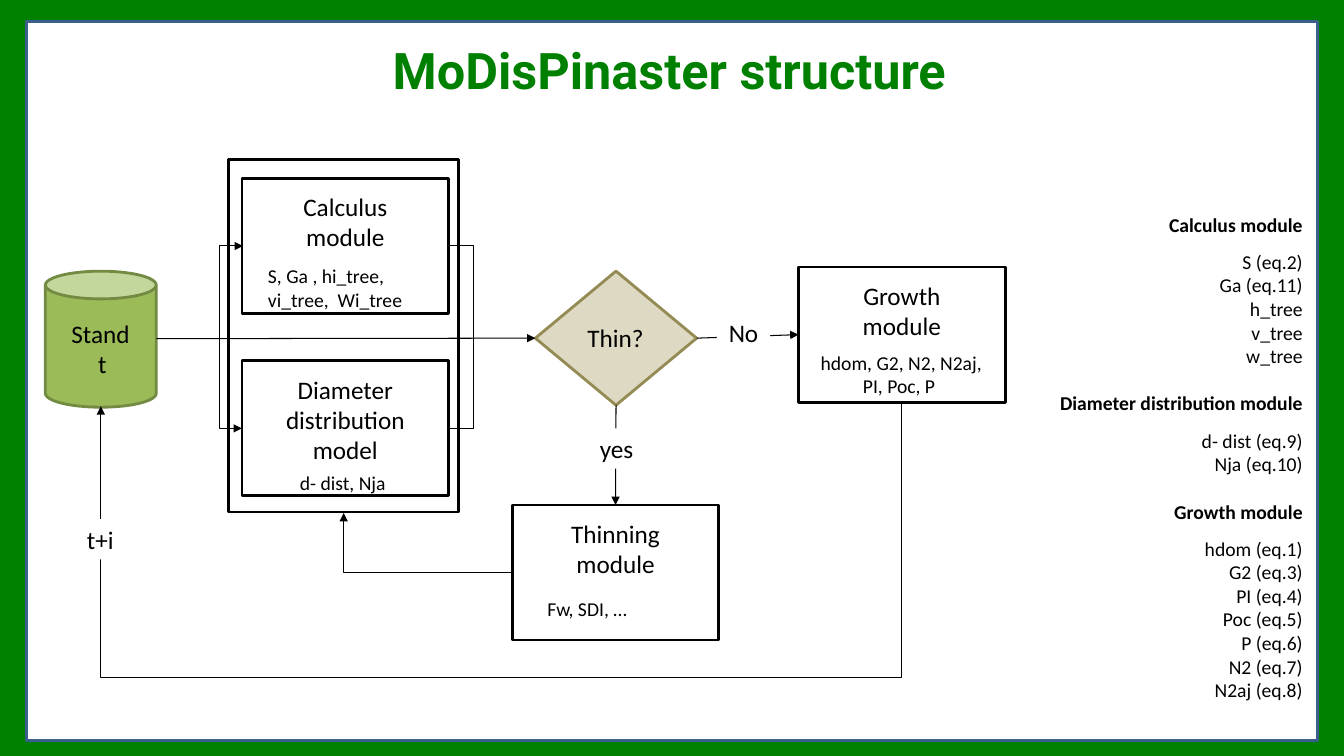
import pptx
import pptx.dml.color
import pptx.enum.shapes
import pptx.enum.text
import pptx.oxml.ns
import pptx.oxml.xmlchemy
import pptx.util

Inches, Pt = pptx.util.Inches, pptx.util.Pt
RGBColor = pptx.dml.color.RGBColor
Preset = pptx.enum.shapes.MSO_SHAPE
Link = pptx.enum.shapes.MSO_CONNECTOR
Align = pptx.enum.text.PP_ALIGN
Anchor = pptx.enum.text.MSO_ANCHOR
qn = pptx.oxml.ns.qn
new_element = pptx.oxml.xmlchemy.OxmlElement

BLACK = RGBColor(0x00, 0x00, 0x00)
WHITE = RGBColor(0xFF, 0xFF, 0xFF)
GREEN = RGBColor(0x00, 0x80, 0x00)
FRAME_BLUE = RGBColor(0x3A, 0x5F, 0x8C)
SAND = RGBColor(0xDD, 0xD9, 0xC3)
SAND_EDGE = RGBColor(0x94, 0x8A, 0x54)
LEAF = RGBColor(0x9B, 0xBB, 0x59)
LEAF_EDGE = RGBColor(0x73, 0x8A, 0x42)

MODULE_WIDTH, MODULE_HEIGHT = 2.05, 1.34


class FlowSlide:
    """Draws on one slide; all lengths are given in inches."""

    font = "Calibri"
    large, small = 18, 14

    def __init__(self, slide):
        self.shapes = slide.shapes

    def shape(self, preset, left, top, width, height, fill=None, edge=BLACK):
        shape = self.shapes.add_shape(
            preset, Inches(left), Inches(top), Inches(width), Inches(height))
        shape.shadow.inherit = False
        if fill is None:
            shape.fill.background()
        else:
            shape.fill.solid()
            shape.fill.fore_color.rgb = fill
        if edge is None:
            shape.line.fill.background()
        else:
            shape.line.color.rgb = edge
            shape.line.width = Pt(2)
        return shape

    def paragraph(self, frame, text, size, align, bold=False, color=BLACK, font=None):
        """Fill the frame's empty first paragraph, or add another one."""
        paragraph = frame.paragraphs[0]
        if paragraph.runs:
            paragraph = frame.add_paragraph()
        paragraph.alignment = align
        run = paragraph.add_run()
        run.text = text
        run.font.name = font or self.font
        run.font.size = Pt(size)
        run.font.bold = bold
        run.font.color.rgb = color
        return paragraph

    def text_box(self, left, top, width, height):
        frame = self.shapes.add_textbox(
            Inches(left), Inches(top), Inches(width), Inches(height)).text_frame
        frame.word_wrap = True
        return frame

    def text(self, text, left, top, width, height, size=small, align=Align.CENTER):
        frame = self.text_box(left, top, width, height)
        self.paragraph(frame, text, size, align)

    def module(self, name, left, top, name_height=0.71):
        box = self.shape(Preset.RECTANGLE, left, top, MODULE_WIDTH, MODULE_HEIGHT)
        self.text(name, left + 0.24, top + 0.08, 1.57, name_height, self.large)
        return box

    def label(self, text, left, top, width):
        """White patch with a word, interrupting the line below it."""
        patch = self.shape(Preset.RECTANGLE, left, top, width, 0.4, WHITE, None)
        patch.text_frame.vertical_anchor = Anchor.MIDDLE
        self.paragraph(patch.text_frame, text, self.large, Align.CENTER)

    def line(self, start, end, kind=Link.STRAIGHT, head=False, tail=True):
        line = self.shapes.add_connector(kind, *map(Inches, start + end))
        line.line.color.rgb = BLACK
        line.line.width = Pt(0.75)
        outline = line._element.spPr.find(qn("a:ln"))
        for tag, wanted in (("a:headEnd", head), ("a:tailEnd", tail)):
            if wanted:
                arrowhead = new_element(tag)
                arrowhead.set("type", "triangle")
                outline.append(arrowhead)
        line._element.spPr.append(new_element("a:effectLst"))
        return line

    def elbow(self, start, end, bend=None, **arrowheads):
        """Elbow with its bend in multiples of its width; without it, one corner."""
        line = self.line(start, end, Link.ELBOW, **arrowheads)
        geometry = line._element.spPr.find(qn("a:prstGeom"))
        if bend is None:
            geometry.set("prst", "bentConnector2")
            return line
        guides = geometry.find(qn("a:avLst"))
        if guides is None:
            guides = new_element("a:avLst")
            geometry.append(guides)
        guide = new_element("a:gd")
        guide.set("name", "adj1")
        guide.set("fmla", f"val {round(bend * 100000)}")
        guides.append(guide)
        return line

    def elbow_below(self, start, end, lowest):
        """Elbow that runs down to lowest, left, and up: a quarter-turned elbow."""
        (x1, y1), (x2, y2) = start, end
        middle_x, middle_y = (x1 + x2) / 2, (y1 + y2) / 2
        half_width, half_height = (y2 - y1) / 2, (x1 - x2) / 2
        line = self.elbow((middle_x - half_width, middle_y - half_height),
                          (middle_x + half_width, middle_y + half_height),
                          (lowest - y1) / (y2 - y1))
        line._element.spPr.find(qn("a:xfrm")).set("rot", str(90 * 60000))

    def equation_list(self, sections, left, top, width, height):
        frame = self.text_box(left, top, width, height)
        for number, (heading, entries) in enumerate(sections):
            title = self.paragraph(frame, heading, self.small, Align.RIGHT, bold=True)
            title.space_before = Pt(17 if number else 0)
            title.space_after = Pt(9.8)
            for entry in entries:
                self.paragraph(frame, entry, self.small, Align.RIGHT)


EQUATIONS = [
    ("Calculus module", ["S (eq.2)", "Ga (eq.11)", "h_tree", "v_tree", "w_tree"]),
    ("Diameter distribution module", ["d- dist (eq.9)", "Nja (eq.10)"]),
    ("Growth module", ["hdom (eq.1)", "G2 (eq.3)", "PI (eq.4)", "Poc (eq.5)",
                       "P (eq.6)", "N2 (eq.7)", "N2aj (eq.8)"]),
]


def main():
    presentation = pptx.Presentation()
    presentation.slide_width, presentation.slide_height = Inches(13.33), Inches(7.5)
    flow = FlowSlide(presentation.slides.add_slide(presentation.slide_layouts[6]))

    flow.shape(Preset.RECTANGLE, 0, 0, 13.33, 7.5, GREEN, GREEN)
    flow.shape(Preset.RECTANGLE, 0.26, 0.21, 12.81, 7.14, WHITE, FRAME_BLUE)
    title = flow.text_box(0.26, 0.3, 12.76, 0.77)
    title.vertical_anchor = Anchor.MIDDLE
    flow.paragraph(title, "MoDisPinaster structure", 36, Align.CENTER, True, GREEN, "Roboto")

    flow.module("Calculus module", 2.4, 1.77)
    flow.module("Diameter distribution model", 2.4, 3.58, 1.01)
    thinning = flow.module("Thinning module", 5.08, 5.01)
    growth = flow.module("Growth module", 7.92, 2.65)
    decision = flow.shape(Preset.FLOWCHART_DECISION, 5.31, 2.69, 1.6, 1.33, SAND, SAND_EDGE)
    flow.text("Thin?", 5.67, 3.15, 0.87, 0.37, flow.large)
    flow.shape(Preset.CAN, 0.45, 2.69, 1.1, 1.35, LEAF, LEAF_EDGE)
    stand = flow.text_box(0.61, 3.11, 0.87, 0.71)
    flow.paragraph(stand, "Stand", flow.large, Align.LEFT)
    flow.paragraph(stand, "t ", flow.large, Align.CENTER)

    stand_to_decision = flow.line((1.55, 3.36), (5.31, 3.35))
    stand_to_decision.end_connect(decision, 1)
    flow.elbow((4.45, 2.44), (4.46, 4.25), 25, tail=False)
    flow.elbow((2.41, 2.44), (2.4, 4.25), 24, head=True)
    no_thinning = flow.line((6.91, 3.35), (7.92, 3.32))
    no_thinning.begin_connect(decision, 3)
    no_thinning.end_connect(growth, 1)
    yes_thinning = flow.line((6.11, 4.02), (6.11, 5.01))
    yes_thinning.begin_connect(decision, 2)
    yes_thinning.end_connect(thinning, 0)
    flow.label("yes", 5.77, 4.25, 0.69)
    flow.label("No", 7.11, 3.1, 0.53)
    flow.elbow_below((8.94, 3.99), (1, 4.03), 6.71)
    flow.shape(Preset.RECTANGLE, 2.27, 1.58, 2.28, 3.5)
    flow.elbow((5.08, 5.68), (3.41, 5.09))
    flow.label("t+i", 0.65, 5.15, 0.69)

    flow.text("S, Ga , hi_tree, vi_tree,  Wi_tree", 2.56, 2.57, 1.74, 0.57, align=Align.LEFT)
    flow.text("hdom, G2, N2, N2aj, PI, Poc, P ", 7.96, 3.43, 1.96, 0.57)
    flow.text("d- dist, Nja", 2.42, 4.62, 1.96, 0.34)
    flow.text("Fw, SDI, …", 5.33, 5.87, 1.57, 0.34, align=Align.LEFT)
    flow.equation_list(EQUATIONS, 10.29, 2.06, 2.73, 5.22)

    presentation.save("out.pptx")


if __name__ == "__main__":
    main()
